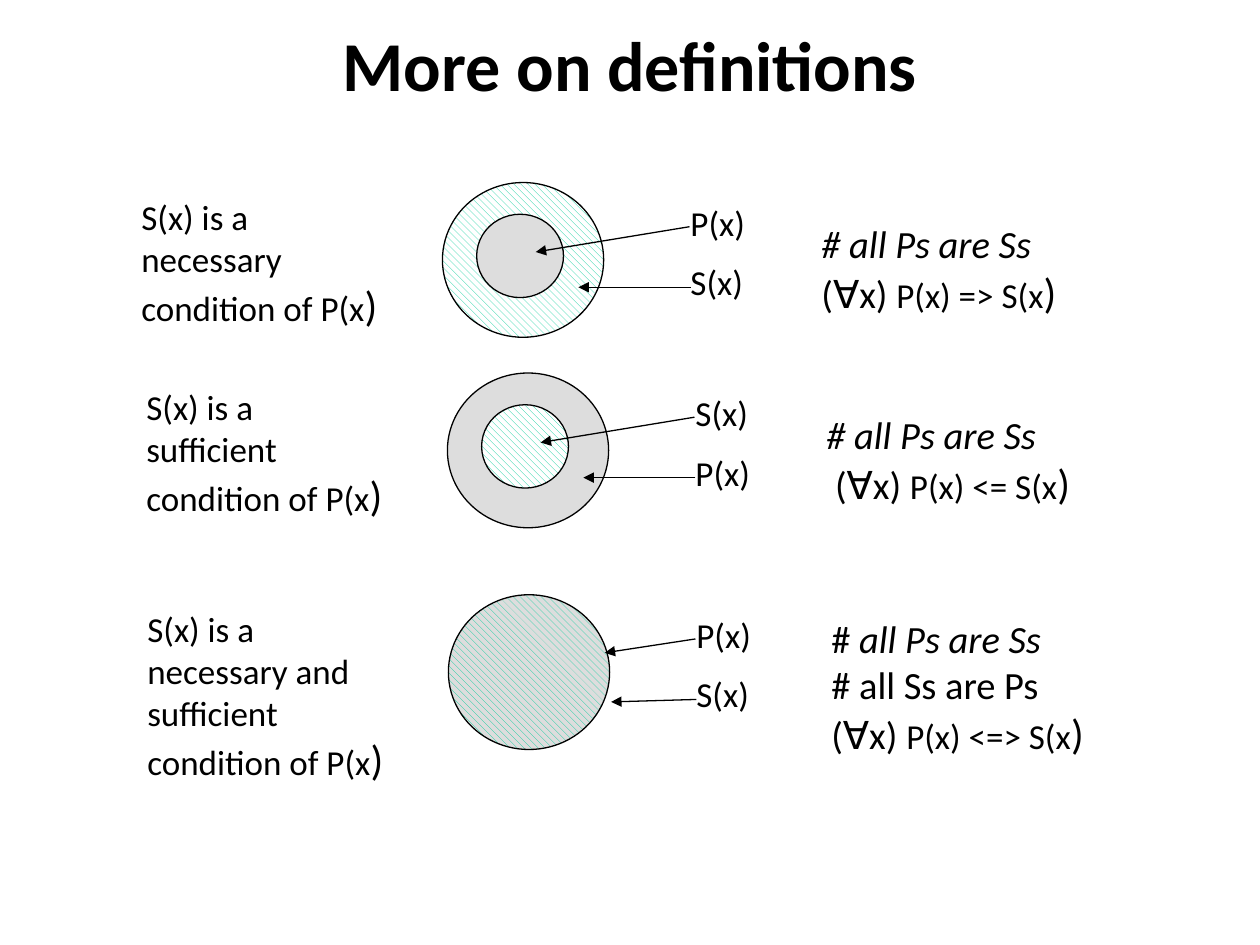
from lxml import etree
from pptx import Presentation
from pptx.dml.color import RGBColor
from pptx.enum import dml, shapes, text
from pptx.oxml.ns import qn
from pptx.util import Cm, Pt

BLACK = RGBColor(0, 0, 0)
WHITE = RGBColor(255, 255, 255)
GREY = RGBColor(0xDD, 0xDD, 0xDD)
GREEN = RGBColor(0, 0xCC, 0x99)

deck = Presentation()
deck.slide_width, deck.slide_height = Cm(25.4), Cm(19.05)
slide = deck.slides.add_slide(deck.slide_layouts[5])


def style(run, size, slant=False, bold=False):
    font = run.font
    font.name, font.size = "Calibri", Pt(size)
    font.italic, font.bold = slant, bold
    font.color.rgb = BLACK


def write(left, top, width, height, paras):
    box = slide.shapes.add_textbox(Cm(left), Cm(top), Cm(width), Cm(height))
    frame = box.text_frame
    frame.word_wrap = True
    frame.auto_size = text.MSO_AUTO_SIZE.SHAPE_TO_FIT_TEXT
    for i, runs in enumerate(paras):
        para = frame.paragraphs[0] if i == 0 else frame.add_paragraph()
        if i:
            para.space_before = Pt(10)
        for words, size, slant in runs:
            for j, line in enumerate(words.split("\n")):
                if j:
                    para.add_line_break()
                if line:
                    run = para.add_run()
                    run.text = line
                    style(run, size, slant)


title = slide.shapes.title
title.left, title.top, title.width, title.height = Cm(1.9), Cm(0.43), Cm(21.6), Cm(1.7)
title.text_frame.vertical_anchor = text.MSO_ANCHOR.MIDDLE
head = title.text_frame.paragraphs[0]
head.alignment = text.PP_ALIGN.CENTER
run = head.add_run()
run.text = "More on definitions"
style(run, 40, bold=True)

big, small = (0, 0, 3.25, 3.12), (0.69, 0.64, 1.75, 1.68)
inner = [(4.98, 0.89, 1.88, 1.4), (5, 2.11, 2.74, 2.11)]
outer = [(4.98, 0.89, 3.15, 1.17), (5, 2.11, 3.28, 2.16)]
all_ps = [("# all Ps are Ss\n", 22, True)]
both = [("#", 22, False), (" all Ps are Ss\n", 22, True), ("# all Ss are Ps\n", 22, False)]

rows = [
    (8.92, 3.68, [(big, WHITE, True), (small, GREY, False)], "PS", inner,
     "necessary", 3, all_ps, "(∀x) ", "=>", (7.39, 0.64, 6.48, 2.24)),
    (9.02, 7.52, [(big, GREY, False), (small, WHITE, True)], "SP", inner,
     "sufficient", 3, all_ps, " (∀x) ", "<=", (7.39, 0.64, 6.22, 2.24)),
    (9.04, 11.99, [(big, GREY, True)], "PS", outer,
     "necessary and sufficient", 3.81, both, "(∀x) ", "<=>", (7.47, 0.28, 7.26, 3.18)),
]

for x, y, discs, names, arrows, kind, tall, notes, quant, sign, place in rows:
    for (dx, dy, width, height), back, hatch in discs:
        disc = slide.shapes.add_shape(shapes.MSO_SHAPE.OVAL, Cm(x + dx), Cm(y + dy),
                                      Cm(width), Cm(height))
        disc.shadow.inherit = False
        if hatch:
            disc.fill.patterned()
            disc.fill.pattern = dml.MSO_PATTERN.WIDE_DOWNWARD_DIAGONAL
            disc.fill.fore_color.rgb = GREEN
            disc.fill.back_color.rgb = back
        else:
            disc.fill.solid()
            disc.fill.fore_color.rgb = back
        disc.line.color.rgb = BLACK
        disc.line.width = Pt(0.75)

    write(x + 4.75, y + 0.25, 2.62, 2.36, [[(f"{name}(x)", 20, False)] for name in names])

    for ax, ay, bx, by in arrows:
        arrow = slide.shapes.add_connector(shapes.MSO_CONNECTOR.STRAIGHT, Cm(x + ax),
                                           Cm(y + ay), Cm(x + bx), Cm(y + by))
        arrow.line.color.rgb = BLACK
        arrow.line.width = Pt(0.75)
        etree.SubElement(arrow.line._get_or_add_ln(), qn("a:tailEnd"), type="triangle")
        etree.SubElement(arrow._element.spPr, qn("a:effectLst"))

    write(x - 6.32, y + 0.13, 5.38, tall,
          [[(f"S(x) is a {kind} condition of P(x", 20, False), (")", 24, False)]])
    dx, dy, width, height = place
    write(x + dx, y + dy, width, height,
          [notes + [(quant, 22, False), (f"P(x) {sign} S(x", 20, False), (")", 24, False)]])

deck.save("out.pptx")
